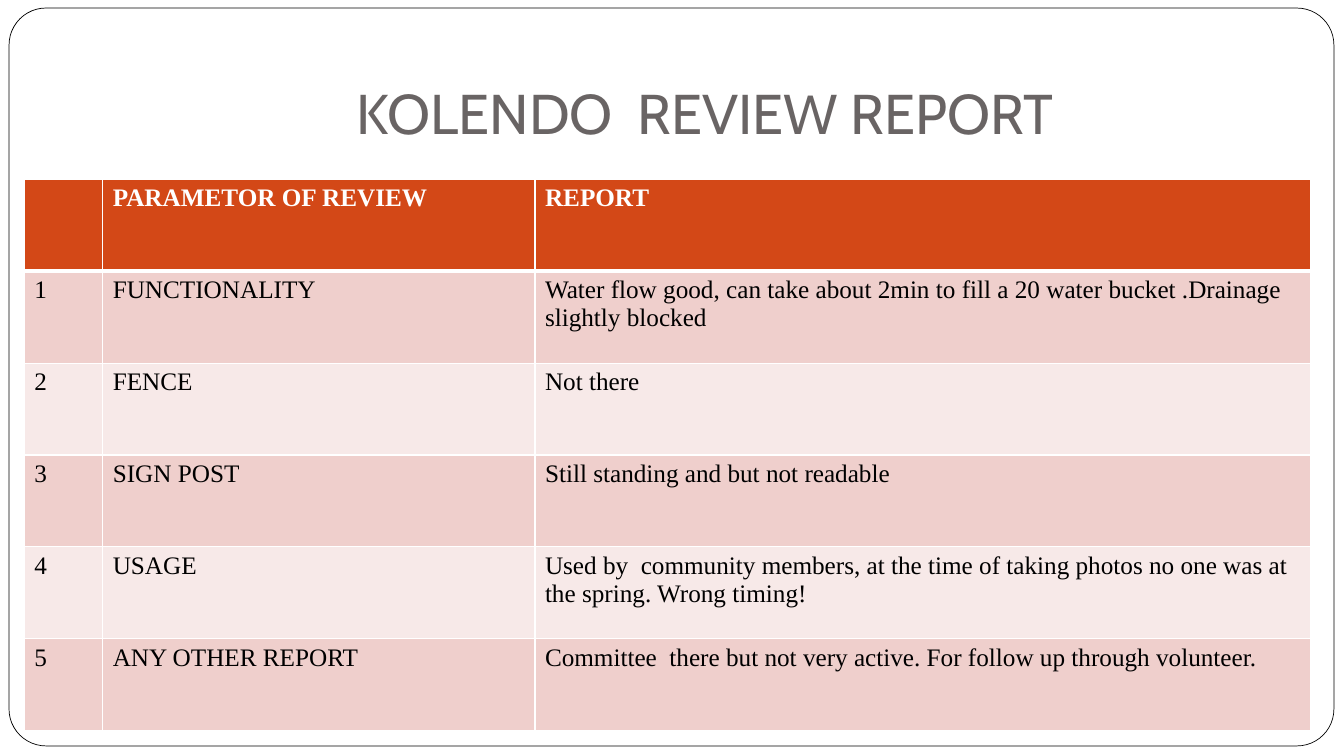
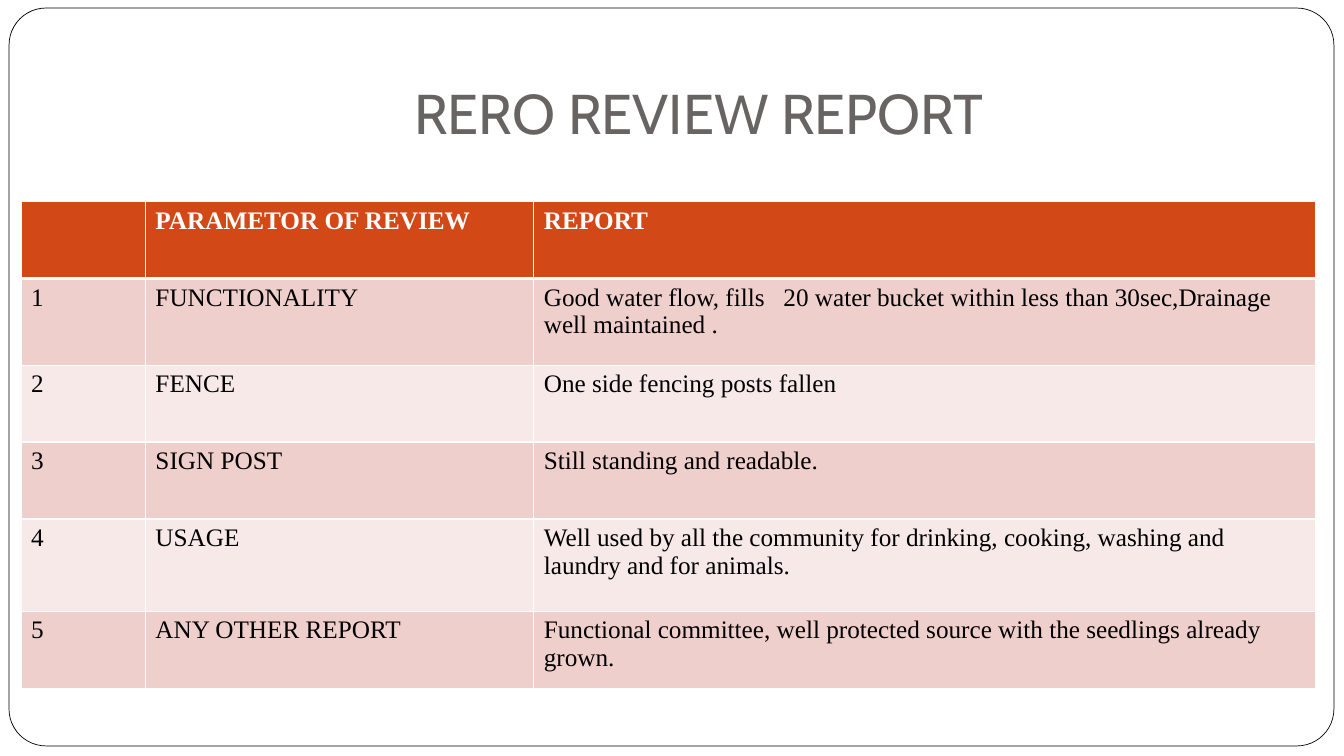
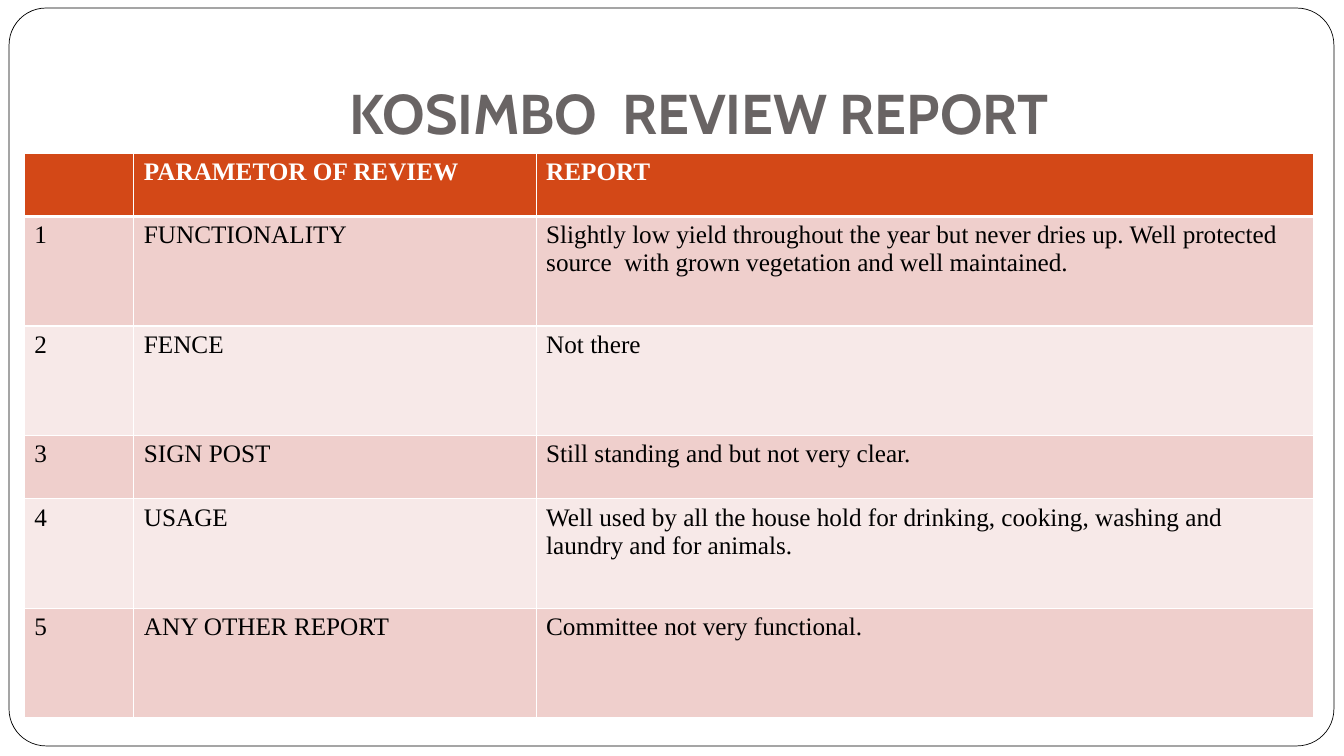
from dataclasses import dataclass

from lxml import etree
from pptx import Presentation
from pptx import util as u
from pptx.dml.color import RGBColor
from pptx.enum import shapes, text
from pptx.oxml import ns


@dataclass(frozen=True)
class Theme:
    white: str = "FFFFFF"
    black: str = "000000"
    title: str = "696464"
    header: str = "D34817"
    bands: tuple = ("EFCFCC", "F7E9E8")
    title_font: str = "Cabin"
    table_font: str = "Times New Roman"
    title_size: int = 40
    table_size: int = 18
    frame_line: float = 0.5
    cell_line: int = 1
    header_line: int = 3


theme = Theme()
PARAMETERS = ("FUNCTIONALITY", "FENCE", "SIGN POST", "USAGE", "ANY OTHER REPORT")

# box: left, top, width, height in inches; columns and rows: shares of the table in percent
REVIEWS = [
    dict(
        title="KOLENDO  REVIEW REPORT", bold=False,
        box=(0.24, 1.78, 12.76, 5.47),
        columns=(6.1, 33.6, 60.3), rows=(100 / 6,) * 6,
        findings=(
            "Water flow good, can take about 2min to fill a 20 water bucket .Drainage slightly blocked",
            "Not there",
            "Still standing and but not readable",
            "Used by  community members, at the time of taking photos no one was at the spring. Wrong timing!",
            "Committee  there but not very active. For follow up through volunteer.",
        ),
    ),
    dict(
        title=" RERO REVIEW REPORT  ", bold=False,
        box=(0.21, 2, 12.84, 4.83),
        columns=(9.6, 30, 60.4), rows=(15.8, 17.8, 15.8, 15.8, 19, 15.8),
        findings=(
            "Good water flow, fills   20 water bucket within less than 30sec,Drainage well maintained .",
            "One side fencing posts fallen",
            "Still standing and readable.",
            "Well used by all the community for drinking, cooking, washing and laundry and for animals.",
            "Functional committee, well protected source with the seedlings already grown.",
        ),
    ),
    dict(
        title="KOSIMBO  REVIEW REPORT ", bold=True,
        box=(0.24, 1.52, 12.79, 5.6),
        columns=(8.5, 31.2, 60.3), rows=(11.2, 19.4, 19.4, 11.2, 19.4, 19.4),
        findings=(
            "Slightly low yield throughout the year but never dries up. Well protected  source  with grown "
            "vegetation and well maintained.",
            "Not there",
            "Still standing and but not very clear.",
            "Well used by all the house hold for drinking, cooking, washing and laundry and for animals.",
            "Committee not very functional.",
        ),
    ),
]


def write(frame, words, *, font, size, color, bold=False, align=text.PP_ALIGN.LEFT):
    paragraph = frame.paragraphs[0]
    paragraph.alignment = align
    run = paragraph.add_run()
    run.text = words
    run.font.name = font
    run.font.size = u.Pt(size)
    run.font.bold = bold
    run.font.color.rgb = RGBColor.from_string(color)


def add_borders(cell, **widths):
    """Draw white cell borders; widths maps L, R, T, B to points, in that order."""
    properties = cell._tc.get_or_add_tcPr()
    for position, (side, width) in enumerate(widths.items()):
        line = etree.Element(ns.qn(f"a:ln{side}"), w=str(u.Pt(width)))
        fill = etree.SubElement(line, ns.qn("a:solidFill"))
        etree.SubElement(fill, ns.qn("a:srgbClr"), val=theme.white)
        properties.insert(position, line)


presentation = Presentation()
presentation.slide_width = u.Inches(13.33)
presentation.slide_height = u.Inches(7.5)
blank = presentation.slide_layouts[6]

for review in REVIEWS:
    slide = presentation.slides.add_slide(blank)

    page_frame = slide.shapes.add_shape(
        shapes.MSO_SHAPE.ROUNDED_RECTANGLE, *map(u.Inches, (0.09, 0.08, 13.14, 7.32)))
    page_frame.adjustments[0] = 0.05
    page_frame.shadow.inherit = False
    page_frame.fill.solid()
    page_frame.fill.fore_color.rgb = RGBColor.from_string(theme.white)
    page_frame.line.color.rgb = RGBColor.from_string(theme.black)
    page_frame.line.width = u.Pt(theme.frame_line)

    title = slide.shapes.add_textbox(*map(u.Inches, (1.33, 0.3, 11.33, 1.25))).text_frame
    title.word_wrap = True
    title.vertical_anchor = text.MSO_ANCHOR.BOTTOM
    title.margin_bottom = u.Inches(0.1)
    write(title, review["title"], font=theme.title_font, size=theme.title_size,
          color=theme.title, bold=review["bold"], align=text.PP_ALIGN.CENTER)

    left, top, width, height = map(u.Inches, review["box"])
    records = [("", "PARAMETOR OF REVIEW", "REPORT")]
    for number, (parameter, finding) in enumerate(zip(PARAMETERS, review["findings"]), 1):
        records.append((str(number), parameter, finding))
    table = slide.shapes.add_table(len(records), 3, left, top, width, height).table
    for column, share in zip(table.columns, review["columns"]):
        column.width = int(width * share / 100)
    for row, share in zip(table.rows, review["rows"]):
        row.height = int(height * share / 100)

    for row_index, record in enumerate(records):
        is_header = row_index == 0
        fill_color = theme.header if is_header else theme.bands[(row_index - 1) % 2]
        for column_index, words in enumerate(record):
            cell = table.cell(row_index, column_index)
            cell.fill.solid()
            cell.fill.fore_color.rgb = RGBColor.from_string(fill_color)
            add_borders(
                cell, L=theme.cell_line, R=theme.cell_line,
                T=theme.header_line if row_index == 1 else theme.cell_line,
                B=theme.header_line if is_header else theme.cell_line)
            if words:
                write(cell.text_frame, words, font=theme.table_font, size=theme.table_size,
                      color=theme.white if is_header else theme.black, bold=is_header)

presentation.save("out.pptx")
